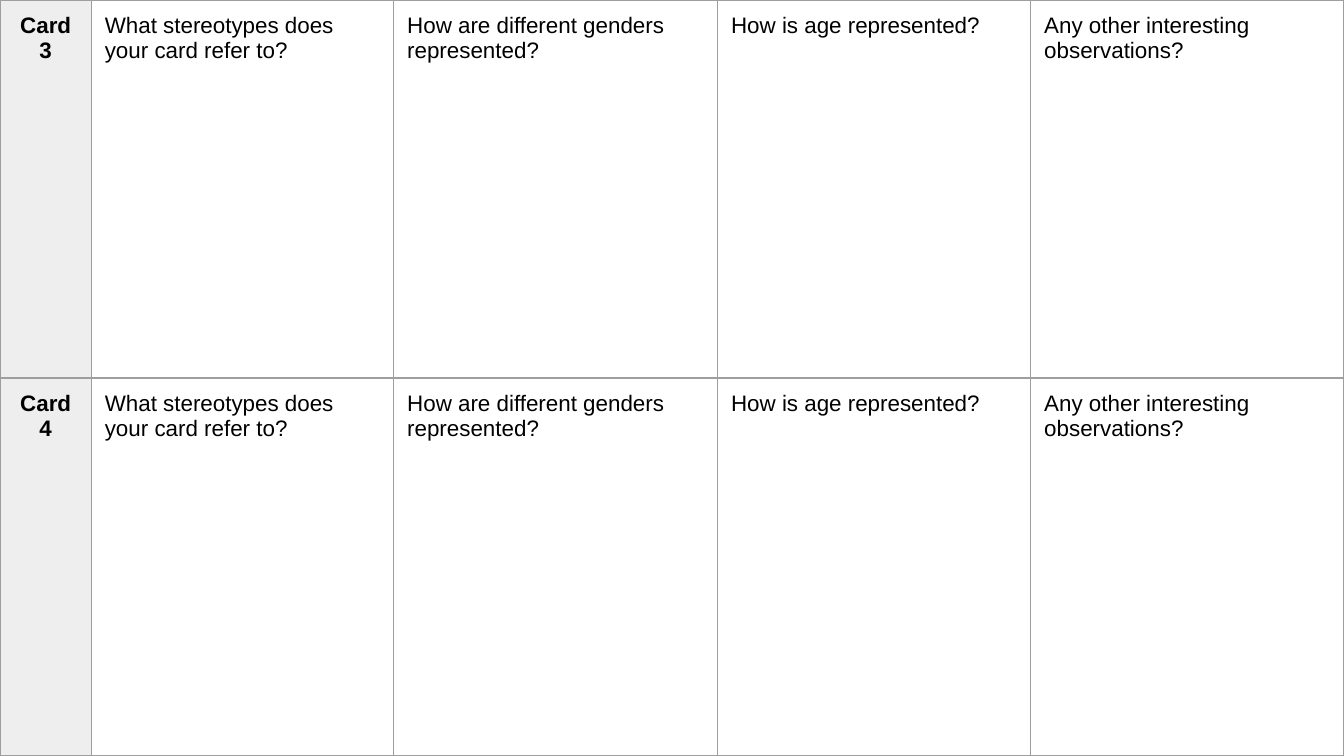
from dataclasses import dataclass

from lxml.etree import SubElement
from pptx import Presentation
from pptx.dml.color import RGBColor
from pptx.enum.text import PP_ALIGN as Align
from pptx.oxml.ns import qn
from pptx.util import Inches, Pt

COLORS = {"text": "000000", "label": "EEEEEE", "border": "9E9E9E"}
FONT = "Arial"
SLIDE_W = 10
SLIDE_H = SLIDE_W * 9 / 16
COL_WIDTHS = [0.68, 2.25, 2.41, 2.33, 2.33]
QUESTIONS = [
    "What stereotypes does your card refer to?",
    "How are different genders represented?",
    "How is age represented?",
    "Any other interesting observations?",
]


@dataclass
class Card:
    label: str
    questions: list[str]


CARDS = [Card(f"Card {number}", QUESTIONS) for number in (3, 4)]


def add_borders(cell, color: str, width: float = 0.75) -> None:
    """Draw a solid line on all four sides of a cell."""
    tc_pr = cell._tc.get_or_add_tcPr()
    for side in ("lnL", "lnR", "lnT", "lnB"):
        ln = SubElement(tc_pr, qn(f"a:{side}"), w=str(Pt(width)))
        fill = SubElement(ln, qn("a:solidFill"))
        SubElement(fill, qn("a:srgbClr"), val=color)


def write_text(cell, text: str, *, size: float = 12, bold: bool = False,
               align: Align = Align.LEFT, color: str = COLORS["text"]) -> None:
    p = cell.text_frame.paragraphs[0]
    p.alignment = align
    r = p.add_run()
    r.text = text
    r.font.name = FONT
    r.font.size = Pt(size)
    r.font.bold = bold
    r.font.color.rgb = RGBColor.from_string(color)


def format_cell(cell, fill: str | None = None) -> None:
    cell.margin_left = cell.margin_right = Inches(0.1)
    cell.margin_top = cell.margin_bottom = Inches(0.1)
    add_borders(cell, COLORS["border"])
    if fill:
        cell.fill.solid()
        cell.fill.fore_color.rgb = RGBColor.from_string(fill)
    else:
        cell.fill.background()


def add_card_table(s, cards: list[Card]) -> None:
    table = s.shapes.add_table(len(cards), len(COL_WIDTHS), 0, 0,
                               Inches(SLIDE_W), Inches(SLIDE_H)).table
    table.first_row = table.horz_banding = False
    for column, width in zip(table.columns, COL_WIDTHS):
        column.width = Inches(width)
    for row, card in zip(table.rows, cards):
        row.height = Inches(SLIDE_H / len(cards))
        label_cell, *question_cells = row.cells
        # Shaded card label
        format_cell(label_cell, COLORS["label"])
        write_text(label_cell, card.label, bold=True, align=Align.CENTER)
        # Questions with room for answers
        for cell, question in zip(question_cells, card.questions):
            format_cell(cell)
            write_text(cell, question)


def main() -> None:
    prs = Presentation()
    prs.slide_width, prs.slide_height = Inches(SLIDE_W), Inches(SLIDE_H)
    s = prs.slides.add_slide(prs.slide_layouts[6])
    add_card_table(s, CARDS)
    prs.save("out.pptx")


if __name__ == "__main__":
    main()
